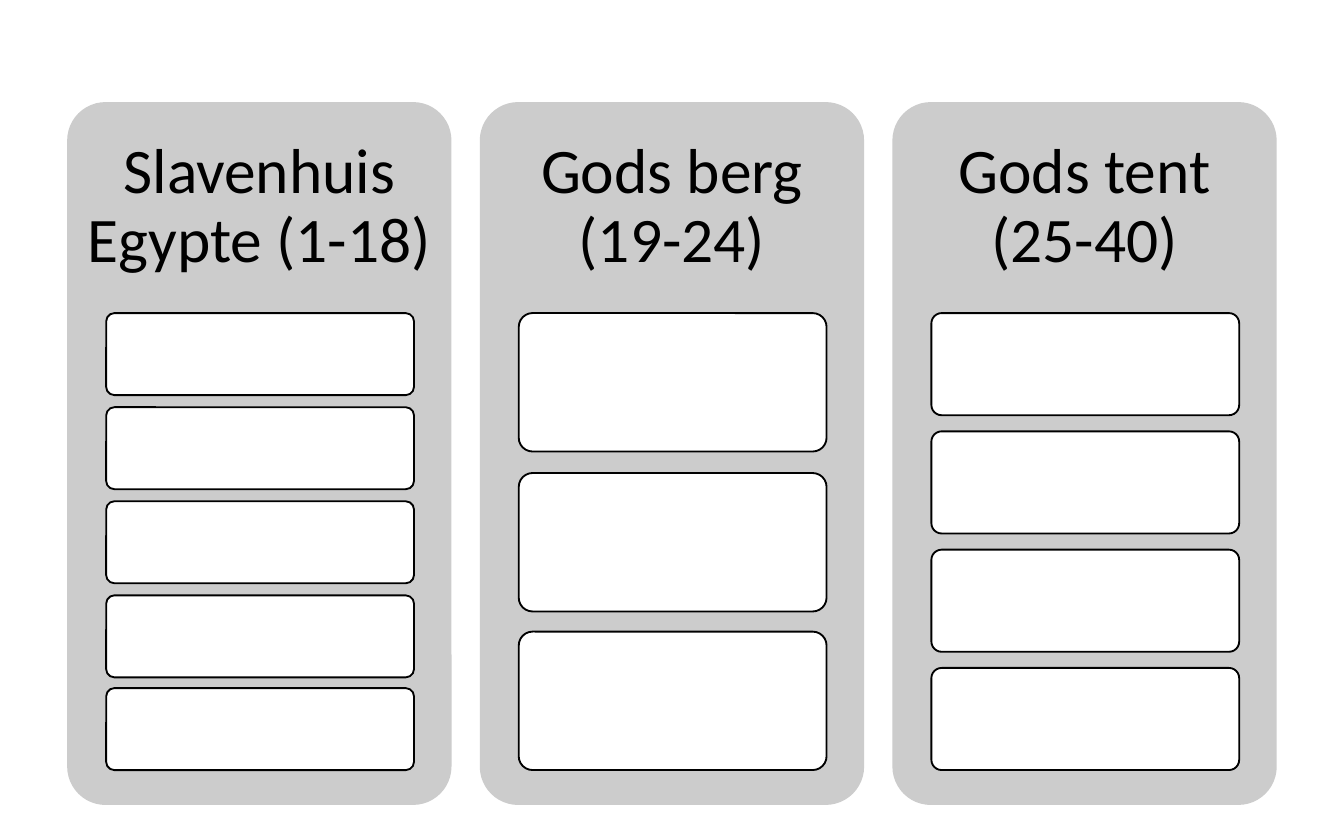
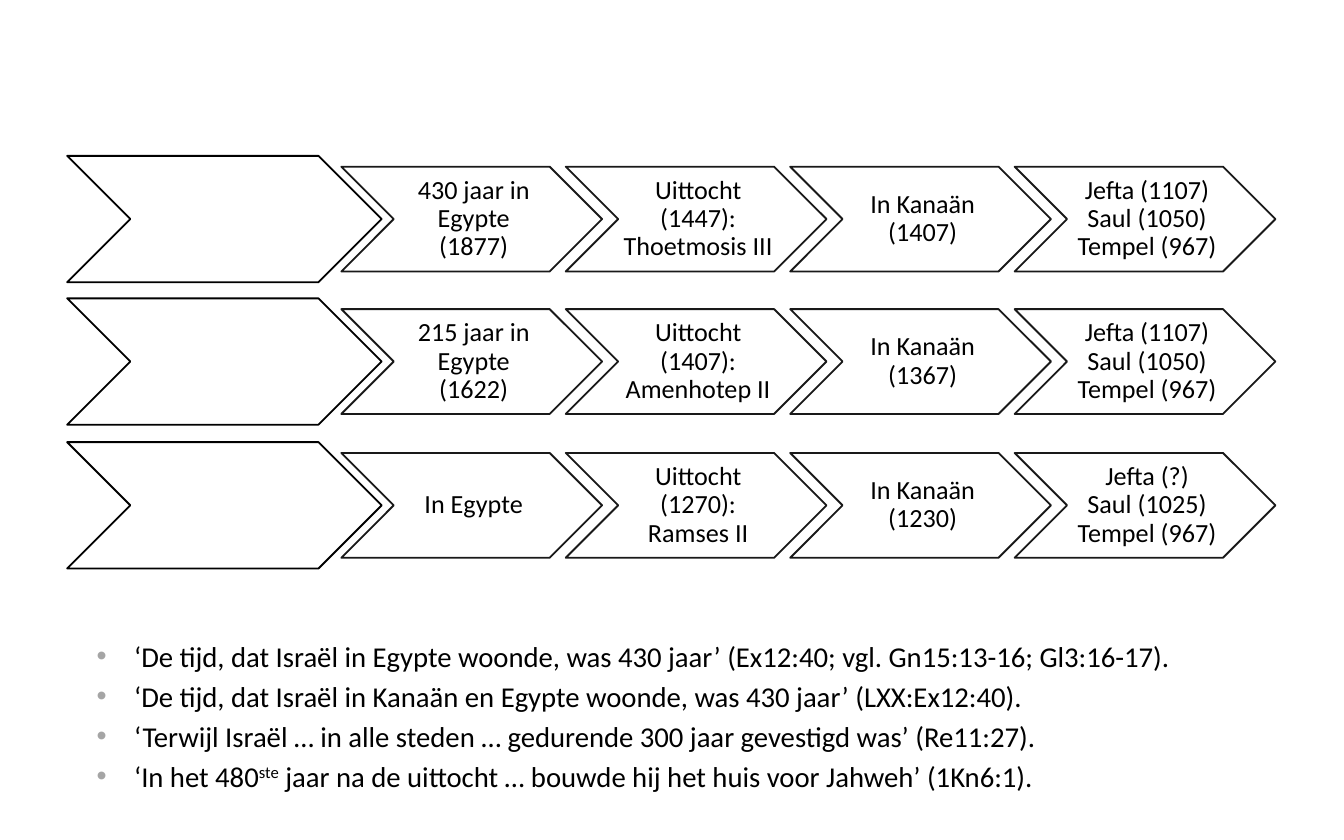
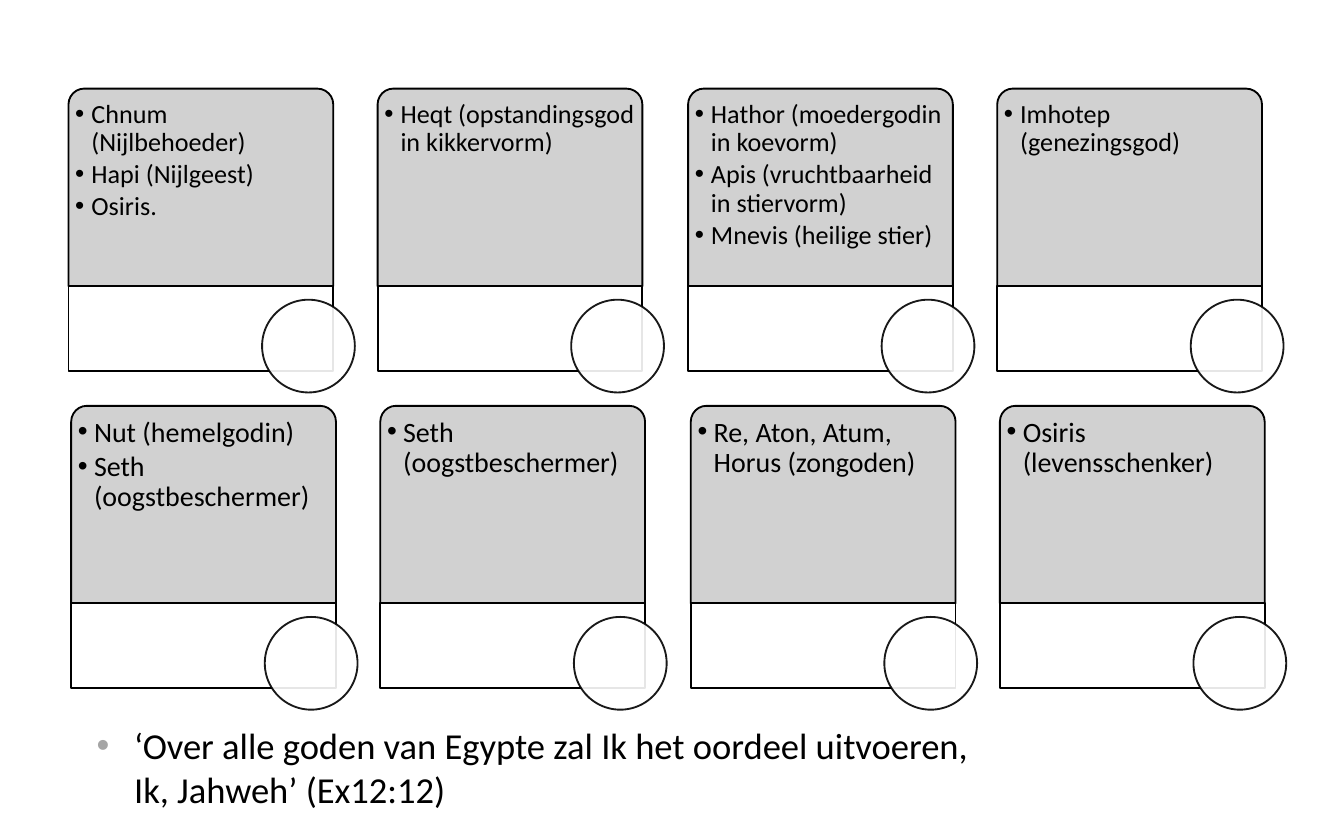
"""Build three slides on Exodus: its outline, its chronologies and the plagues against Egypt's gods."""
from dataclasses import dataclass

from lxml import etree
from pptx import Presentation
from pptx.dml.color import RGBColor
from pptx.enum.shapes import MSO_SHAPE
from pptx.enum.text import MSO_ANCHOR, PP_ALIGN
from pptx.oxml.ns import qn
from pptx.util import Pt

PX = 9144
ROUNDED, CHEVRON = MSO_SHAPE.ROUNDED_RECTANGLE, MSO_SHAPE.CHEVRON
TOP_ROUNDED, RECTANGLE, CIRCLE = MSO_SHAPE.ROUND_2_SAME_RECTANGLE, MSO_SHAPE.RECTANGLE, MSO_SHAPE.OVAL
TOP, MIDDLE = MSO_ANCHOR.TOP, MSO_ANCHOR.MIDDLE
LEFT, CENTER = PP_ALIGN.LEFT, PP_ALIGN.CENTER


@dataclass(frozen=True)
class Theme:
    font: str = "Calibri"
    ink: str = "000000"
    paper: str = "FFFFFF"
    panel: str = "CCCCCC"
    bullet: str = "A5A5A5"
    opacity: str = "90000"
    heading: float = 34
    step: float = 14
    gods: tuple = (14, 15)
    sources: float = 15.4
    verse: float = 19.6


THEME = Theme()
CENTERED = {"alignment": CENTER, "line_spacing": 0.9}
HEADING = {"size": THEME.heading, "anchor": MIDDLE, "insets": (14, 14, 14, 14), "layout": CENTERED}
STEP = {"size": THEME.step, "anchor": MIDDLE, "insets": (2, 1, 0, 1), "layout": CENTERED}
NOTE = {"anchor": TOP, "insets": (10, 5, 10, 5), "indent": (40, -28), "bullet": THEME.bullet,
        "layout": {"alignment": LEFT, "space_before": Pt(3)}}
GODS = {"anchor": TOP, "insets": (2, 6, 2, 2), "indent": (12, -12), "bullet": THEME.ink}


def add_panel(slide, preset, box, fill=THEME.paper, outlined=True, see_through=0, corners=()):
    """Add a shape; see_through counts its translucent parts: fill first, then line."""
    panel = slide.shapes.add_shape(preset, *(round(v) * PX for v in box))
    panel.shadow.inherit = False
    for index, corner in enumerate(corners):
        panel.adjustments[index] = corner
    panel.fill.solid()
    panel.fill.fore_color.rgb = RGBColor.from_string(fill)
    if outlined:
        panel.line.color.rgb = RGBColor.from_string(THEME.ink)
        panel.line.width = Pt(1)
    else:
        panel.line.fill.background()
    colours = list(panel._element.spPr.iter(qn("a:srgbClr")))
    for colour in colours[:see_through]:
        etree.SubElement(colour, qn("a:alpha"), val=THEME.opacity)


def add_text(slide, box, texts, size, anchor, insets, layout, indent=None, bullet=None):
    """Add a text box with one paragraph per text; carets enclose superscript."""
    frame = slide.shapes.add_textbox(*(round(v) * PX for v in box)).text_frame
    sides = ("margin_left", "margin_top", "margin_right", "margin_bottom")
    frame_format = {"word_wrap": True, "vertical_anchor": anchor}
    frame_format.update({side: inset * PX for side, inset in zip(sides, insets)})
    for name, value in frame_format.items():
        setattr(frame, name, value)
    for number, text in enumerate(texts):
        paragraph = frame.add_paragraph() if number else frame.paragraphs[0]
        for name, value in layout.items():
            setattr(paragraph, name, value)
        if bullet:
            properties = paragraph._p.get_or_add_pPr()
            properties.set("marL", str(indent[0] * PX))
            properties.set("indent", str(indent[1] * PX))
            colour = etree.SubElement(properties, qn("a:buClr"))
            etree.SubElement(colour, qn("a:srgbClr"), val=bullet)
            etree.SubElement(properties, qn("a:buFont"), typeface="Arial")
            etree.SubElement(properties, qn("a:buChar"), char="•")
        for part, piece in enumerate(text.split("^")):
            for row, line in enumerate(piece.split("\n")):
                if row:
                    paragraph.add_line_break()
                run = paragraph.add_run()
                run.text = line
                for name, value in {"name": THEME.font, "size": Pt(size)}.items():
                    setattr(run.font, name, value)
                run.font.color.rgb = RGBColor.from_string(THEME.ink)
                if part % 2:
                    run.font._element.set("baseline", "30000")
        for line_break in paragraph._p.iter(qn("a:br")):
            etree.SubElement(line_break, qn("a:rPr"), sz=str(round(size * 100)))


deck = Presentation()
deck.slide_width, deck.slide_height = 1000 * PX, 625 * PX
blank = deck.slide_layouts[6]
outline, chronology, plagues = [deck.slides.add_slide(blank) for _ in range(3)]

SECTIONS = [("Slavenhuis Egypte (1-18)", 5), ("Gods berg (19-24)", 3), ("Gods tent (25-40)", 4)]
GAP_RATIO = 0.154
for column, (heading, chapters) in enumerate(SECTIONS):
    left = 50 + 307 * column
    add_panel(outline, ROUNDED, (left, 76, 286, 523), THEME.panel, outlined=False, corners=(0.1,))
    add_text(outline, (left, 76, 286, 157), [heading], **HEADING)
    height = 340 / (chapters + (chapters - 1) * GAP_RATIO)
    for chapter in range(chapters):
        top = 233 + chapter * height * (1 + GAP_RATIO)
        add_panel(outline, ROUNDED, (left + 29, top, 229, height), corners=(0.1,))

TIMELINES = [
    ["430 jaar in Egypte\n(1877)", "Uittocht (1447): Thoetmosis III", "In Kanaän (1407)",
     "Jefta (1107)\nSaul (1050)\nTempel (967)"],
    ["215 jaar in Egypte\n(1622)", "Uittocht (1407): Amenhotep II", "In Kanaän (1367)",
     "Jefta (1107)\nSaul (1050)\nTempel (967)"],
    ["In Egypte", "Uittocht (1270): Ramses II", "In Kanaän (1230)",
     "Jefta (?)\nSaul (1025)\nTempel (967)"],
]
for row, steps in enumerate(TIMELINES):
    top = round(115.7 + 106.7 * row)
    add_panel(chronology, CHEVRON, (50, top, 234, 94))
    for column, step in enumerate(steps):
        left = 254 + 167 * column
        add_panel(chronology, CHEVRON, (left, top + 8, 194, 78), see_through=2)
        add_text(chronology, (left + 39, top + 8, 117, 78), [step], **STEP)

SOURCES = [
    "‘De tijd, dat Israël in Egypte woonde, was 430 jaar’ (Ex12:40; vgl. Gn15:13-16; Gl3:16-17).",
    "‘De tijd, dat Israël in Kanaän en Egypte woonde, was 430 jaar’ (LXX:Ex12:40).",
    "‘Terwijl Israël … in alle steden … gedurende 300 jaar gevestigd was’ (Re11:27).",
    "‘In het 480^ste^ jaar na de uittocht … bouwde hij het huis voor Jahweh’ (1Kn6:1).",
]
add_text(chronology, (50, 470, 900, 129), SOURCES, size=THEME.sources, **NOTE)

PLAGUE_ROWS = [
    (51, 66, [
        ["Chnum (Nijlbehoeder)", "Hapi (Nijlgeest)", "Osiris."],
        ["Heqt (opstandingsgod in kikkervorm)"],
        ["Hathor (moedergodin in koevorm)", "Apis (vruchtbaarheid in stiervorm)",
         "Mnevis (heilige stier)"],
        ["Imhotep (genezingsgod)"],
    ]),
    (53, 302, [
        ["Nut (hemelgodin)", "Seth (oogstbeschermer)"],
        ["Seth (oogstbeschermer)"],
        ["Re, Aton, Atum, Horus (zongoden)"],
        ["Osiris (levensschenker)"],
    ]),
]
for (start, top, cards), size in zip(PLAGUE_ROWS, THEME.gods):
    spacing = {"alignment": LEFT, "line_spacing": 0.9, "space_after": Pt(size * 0.15)}
    for column, gods in enumerate(cards):
        left = round(start + 230.4 * column)
        add_panel(plagues, TOP_ROUNDED, (left, top, 197, 147), THEME.panel,
                  see_through=1, corners=(0.08, 0))
        add_text(plagues, (left + 3, top + 3, 190, 144), gods, size=size, layout=spacing, **GODS)
        add_panel(plagues, RECTANGLE, (left, top + 147, 197, 63))
        add_panel(plagues, CIRCLE, (left + 144, top + 157, 69, 69), see_through=2)

VERSE = "‘Over alle goden van Egypte zal Ik het oordeel uitvoeren,\nIk, Jahweh’ (Ex12:12)"
add_text(plagues, (50, 533, 900, 66), [VERSE], size=THEME.verse, **NOTE)

deck.save("out.pptx")
